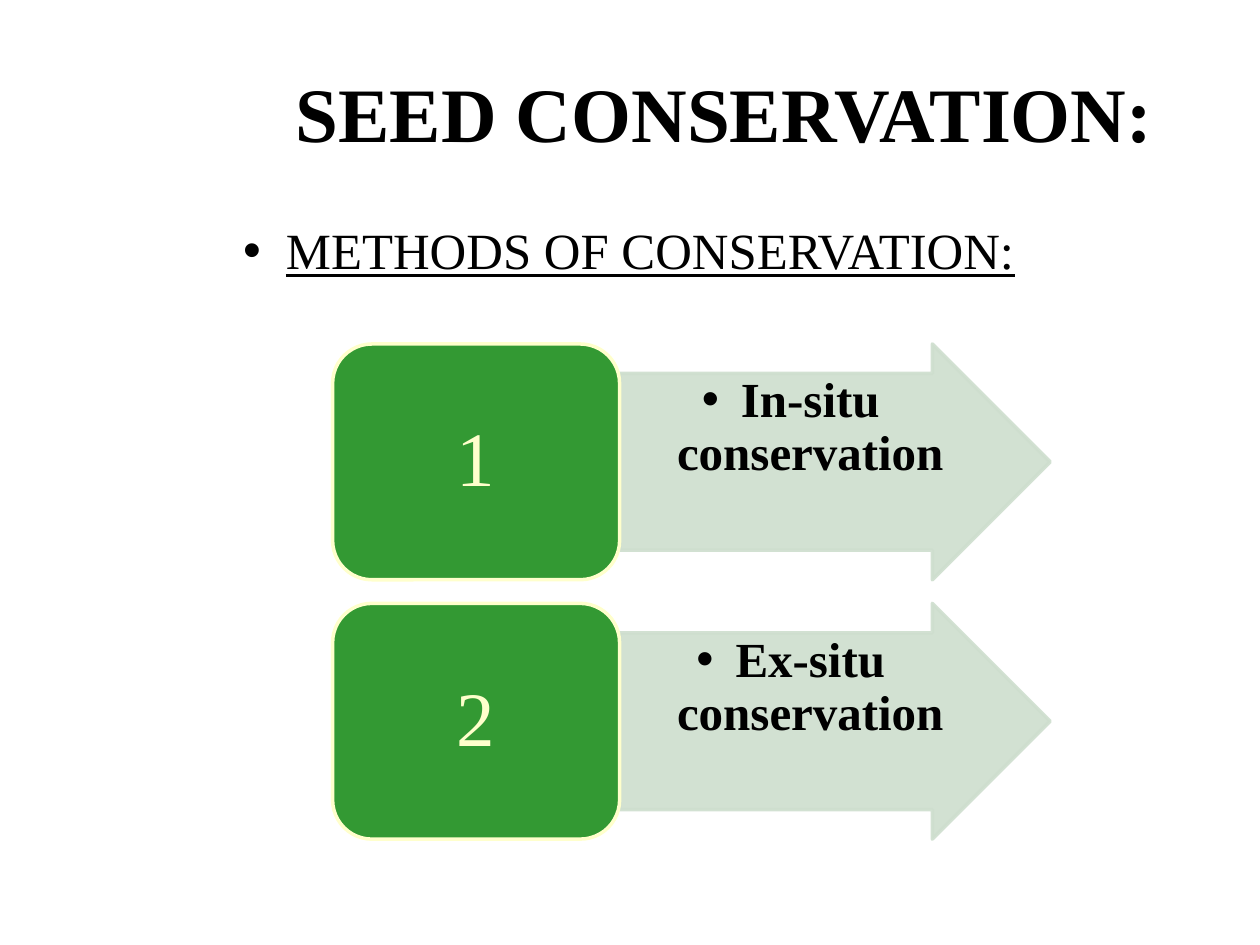
from lxml.etree import SubElement
from pptx import Presentation
from pptx.dml.color import RGBColor
from pptx.enum.shapes import MSO_SHAPE
from pptx.enum.text import MSO_ANCHOR, MSO_AUTO_SIZE, PP_ALIGN
from pptx.oxml.ns import qn
from pptx.util import Emu, Inches, Pt

BLACK = RGBColor(0x00, 0x00, 0x00)
GREEN = RGBColor(0x33, 0x99, 0x33)
CREAM = RGBColor(0xFF, 0xFF, 0xCC)
SAGE = RGBColor(0xCE, 0xDE, 0xCE)
FONT = "Times New Roman"

# The slide is a grid of 100 columns by 75 rows
CELL = Inches(0.1)
TITLE_BOX = (20.05, 3, 74.9, 12.5)
HEADING_BOX = (19.3, 17.5, 75.6, 6)
METHODS_BOX = (26.4, 27.3, 56.95, 39.3)
METHODS = [("1", "In-situ conservation"), ("2", "Ex-situ conservation")]
ROW_GAP = 0.1  # share of a row's height
NUMBER_SHARE = 0.4  # share of a row's width


def cells(*values):
    return [Emu(round(value * CELL)) for value in values]


def write(shape, text, size, color=BLACK, bold=False, underline=None,
          align=PP_ALIGN.CENTER, anchor=MSO_ANCHOR.TOP, line_spacing=0.9,
          insets=(0, 0, 0, 0), bullet_indent=None):
    frame = shape.text_frame
    frame.word_wrap = True
    frame.auto_size = MSO_AUTO_SIZE.NONE
    frame.vertical_anchor = anchor
    (frame.margin_left, frame.margin_top,
     frame.margin_right, frame.margin_bottom) = cells(*insets)
    paragraph = frame.paragraphs[0]
    paragraph.alignment = align
    paragraph.line_spacing = line_spacing
    if bullet_indent:
        properties = paragraph._p.get_or_add_pPr()
        indent = round(bullet_indent * CELL)
        properties.set("marL", str(indent))
        properties.set("indent", str(-indent))
        SubElement(properties, qn("a:buFont"), typeface="Arial")
        SubElement(properties, qn("a:buChar"), char="•")
    run = paragraph.add_run()
    run.text = text
    run.font.name = FONT
    run.font.size = Pt(size)
    run.font.bold = bold
    run.font.underline = underline
    run.font.color.rgb = color


def add_block(slide, preset, box, fill, line, opacity=100):
    block = slide.shapes.add_shape(preset, *cells(*box))
    block.shadow.inherit = False
    block.fill.solid()
    block.fill.fore_color.rgb = fill
    block.line.color.rgb = line
    block.line.width = Pt(2)
    if opacity < 100:
        for color in block._element.spPr.iter(qn("a:srgbClr")):
            SubElement(color, qn("a:alpha"), val=str(opacity * 1000))
    return block


def add_title(slide, box):
    title = slide.shapes.title
    title.left, title.top, title.width, title.height = cells(*box)
    write(title, "SEED CONSERVATION:", 44, bold=True,
          anchor=MSO_ANCHOR.MIDDLE, line_spacing=0.93)


def add_heading(slide, box):
    heading = slide.shapes.add_textbox(*cells(*box))
    write(heading, "METHODS OF CONSERVATION:", 29, underline=True,
          align=PP_ALIGN.LEFT, line_spacing=0.93, insets=(0, 0.3, 0, 0),
          bullet_indent=3.4)


def add_method(slide, box, number, method):
    left, top, width, height = box
    number_width = width * NUMBER_SHARE
    # Arrow with the method
    arrow = add_block(slide, MSO_SHAPE.RIGHT_ARROW,
                      (left + number_width, top, width - number_width, height),
                      SAGE, SAGE, opacity=90)
    arrow.adjustments[0] = 0.75
    arrow.adjustments[1] = 0.5
    write(arrow, method, 28, bold=True, insets=(0.2, 0.15, 0.2, 0.2),
          bullet_indent=3.1)
    # Number tile
    tile = add_block(slide, MSO_SHAPE.ROUNDED_RECTANGLE,
                     (left, top, number_width, height), GREEN, CREAM)
    write(tile, number, 44, color=CREAM, anchor=MSO_ANCHOR.MIDDLE,
          insets=(1.8, 0.9, 1.8, 0.9))


def add_methods(slide, box):
    left, top, width, height = box
    row_height = height / (len(METHODS) + ROW_GAP * (len(METHODS) - 1))
    pitch = row_height * (1 + ROW_GAP)
    for row, (number, method) in enumerate(METHODS):
        add_method(slide, (left, top + row * pitch, width, row_height),
                   number, method)


def main():
    deck = Presentation()
    deck.slide_width, deck.slide_height = cells(100, 75)
    slide = deck.slides.add_slide(deck.slide_layouts[5])
    add_title(slide, TITLE_BOX)
    add_heading(slide, HEADING_BOX)
    add_methods(slide, METHODS_BOX)
    deck.save("out.pptx")


if __name__ == "__main__":
    main()
